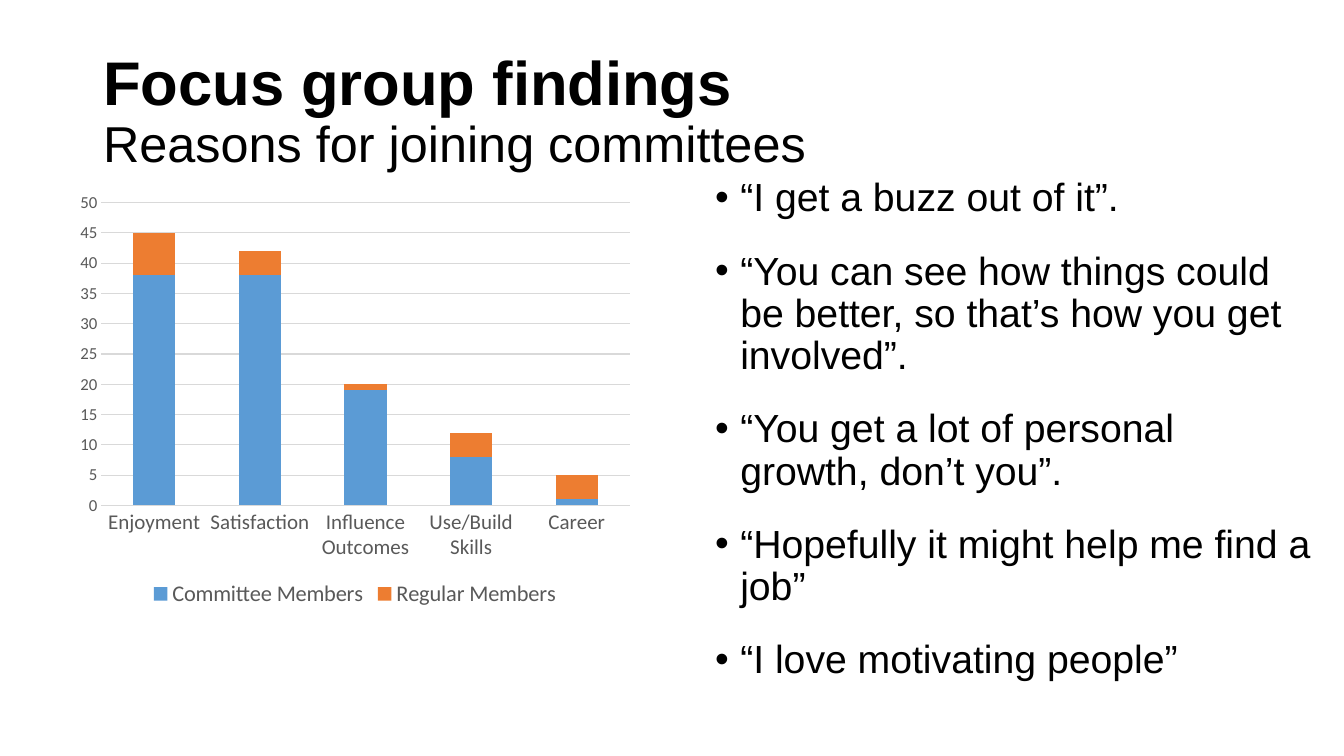
from dataclasses import dataclass

from lxml.etree import SubElement
from pptx import Presentation
from pptx.chart.data import CategoryChartData
from pptx.dml.color import RGBColor
from pptx.enum.chart import XL_CHART_TYPE as ChartType
from pptx.enum.chart import XL_LEGEND_POSITION as LegendPos
from pptx.enum.chart import XL_TICK_MARK as Tick
from pptx.enum.text import MSO_ANCHOR as Anchor
from pptx.enum.text import MSO_AUTO_SIZE as AutoSize
from pptx.enum.text import PP_ALIGN as Align
from pptx.oxml.ns import qn
from pptx.util import Emu, Pt

EMU_PER_PX = 914400 / 100.8


@dataclass(frozen=True)
class Theme:
    """Colours, fonts and type sizes of the slide."""
    text: str = "000000"
    muted: str = "595959"
    grid: str = "D9D9D9"
    series: tuple = ("5B9BD5", "ED7D31")
    text_font: str = "Arial"
    chart_font: str = "Calibri"
    title: int = 44
    subtitle: int = 36
    body: int = 28
    legend: int = 16
    categories: int = 15
    values: int = 12


def px(n):
    """Turn pixels into EMU."""
    return Emu(round(n * EMU_PER_PX))


def style(font, size, color, name, bold=False):
    """Format a font."""
    font.size, font.name, font.bold = Pt(size), name, bold
    font.color.rgb = RGBColor.from_string(color)


def add_text(p, text, **fmt):
    """Add a formatted run to a paragraph."""
    r = p.add_run()
    r.text = text
    style(r.font, **fmt)


class SlideBuilder:
    """Places styled elements on the current slide."""

    def __init__(self, prs, theme):
        """Add a title and content slide."""
        self.theme = theme
        self.s = prs.slides.add_slide(prs.slide_layouts[1])

    def frame(self, idx, box, anchor):
        """Move a placeholder and return its text frame."""
        sp = self.s.placeholders[idx]
        sp.left, sp.top, sp.width, sp.height = map(px, box)
        tf = sp.text_frame
        tf.word_wrap, tf.auto_size = True, AutoSize.NONE
        tf.vertical_anchor = anchor
        return tf

    def title(self, heading, subheading, box):
        """Fill the title with a heading and a lighter second line."""
        t = self.theme
        p = self.frame(0, box, Anchor.MIDDLE).paragraphs[0]
        p.alignment, p.line_spacing = Align.LEFT, 0.9
        fmt = dict(color=t.text, name=t.text_font)
        add_text(p, heading, size=t.title, bold=True, **fmt)
        p.add_line_break()
        add_text(p, subheading, size=t.subtitle, **fmt)

    def bullets(self, items, box):
        """Fill the body with a bulleted list."""
        t = self.theme
        tf = self.frame(1, box, Anchor.TOP)
        for i, item in enumerate(items):
            p = tf.add_paragraph() if i else tf.paragraphs[0]
            pPr = p._p.get_or_add_pPr()
            pPr.set("marL", "228600")
            pPr.set("indent", "-228600")
            SubElement(pPr, qn("a:buFont"), typeface=t.text_font)
            SubElement(pPr, qn("a:buChar"), char="•")
            p.alignment, p.line_spacing = Align.LEFT, 0.9
            p.space_before, p.space_after = Pt(10 if i else 0), Pt(12)
            add_text(p, item, size=t.body, color=t.text, name=t.text_font)

    def axis(self, axis, size):
        """Format the labels and ticks of an axis."""
        axis.major_tick_mark = axis.minor_tick_mark = Tick.NONE
        style(axis.tick_labels.font, size, self.theme.muted, self.theme.chart_font)

    def rule(self, line):
        """Format a thin grey chart line."""
        line.width = Pt(0.75)
        line.color.rgb = RGBColor.from_string(self.theme.grid)

    def stacked_columns(self, categories, series, box):
        """Add a stacked column chart with a legend below."""
        t = self.theme
        data = CategoryChartData()
        data.categories = categories
        for name, values in series.items():
            data.add_series(name, values)
        chart = self.s.shapes.add_chart(
            ChartType.COLUMN_STACKED, *map(px, box), data).chart
        style(chart.font, 10, t.text, t.chart_font)
        chart.has_title = False
        chart.has_legend = True
        chart.legend.position = LegendPos.BOTTOM
        chart.legend.include_in_layout = False
        style(chart.legend.font, t.legend, t.muted, t.chart_font)

        plot = chart.plots[0]
        plot.gap_width, plot.overlap = 150, 100
        plot.vary_by_categories = False
        for ser, color in zip(plot.series, t.series):
            ser.format.fill.solid()
            ser.format.fill.fore_color.rgb = RGBColor.from_string(color)

        self.axis(chart.category_axis, t.categories)
        self.rule(chart.category_axis.format.line)
        val = chart.value_axis
        self.axis(val, t.values)
        val.minimum_scale, val.maximum_scale, val.major_unit = 0, 50, 5
        val.format.line.fill.background()
        self.rule(val.major_gridlines.format.line)


def main():
    """Build and save the focus group slide."""
    prs = Presentation()
    prs.slide_width, prs.slide_height = px(1344), px(756)
    slide = SlideBuilder(prs, Theme())
    slide.title("Focus group findings", "Reasons for joining committees",
                (93, 40, 1159, 146))
    slide.stacked_columns(
        ["Enjoyment", "Satisfaction", "Influence Outcomes", "Use/Build Skills", "Career"],
        {"Committee Members": (38, 38, 19, 8, 1),
         "Regular Members": (7, 4, 1, 4, 4)},
        (69, 184, 572, 428))
    slide.bullets(
        ["“I get a buzz out of it”.",
         "“You can see how things could be better, so that’s how you get involved”.",
         "“You get a lot of personal growth, don’t you”.",
         "“Hopefully it might help me find a job”",
         "“I love motivating people”"],
        (705, 173, 618, 519))
    prs.save("out.pptx")


if __name__ == "__main__":
    main()
